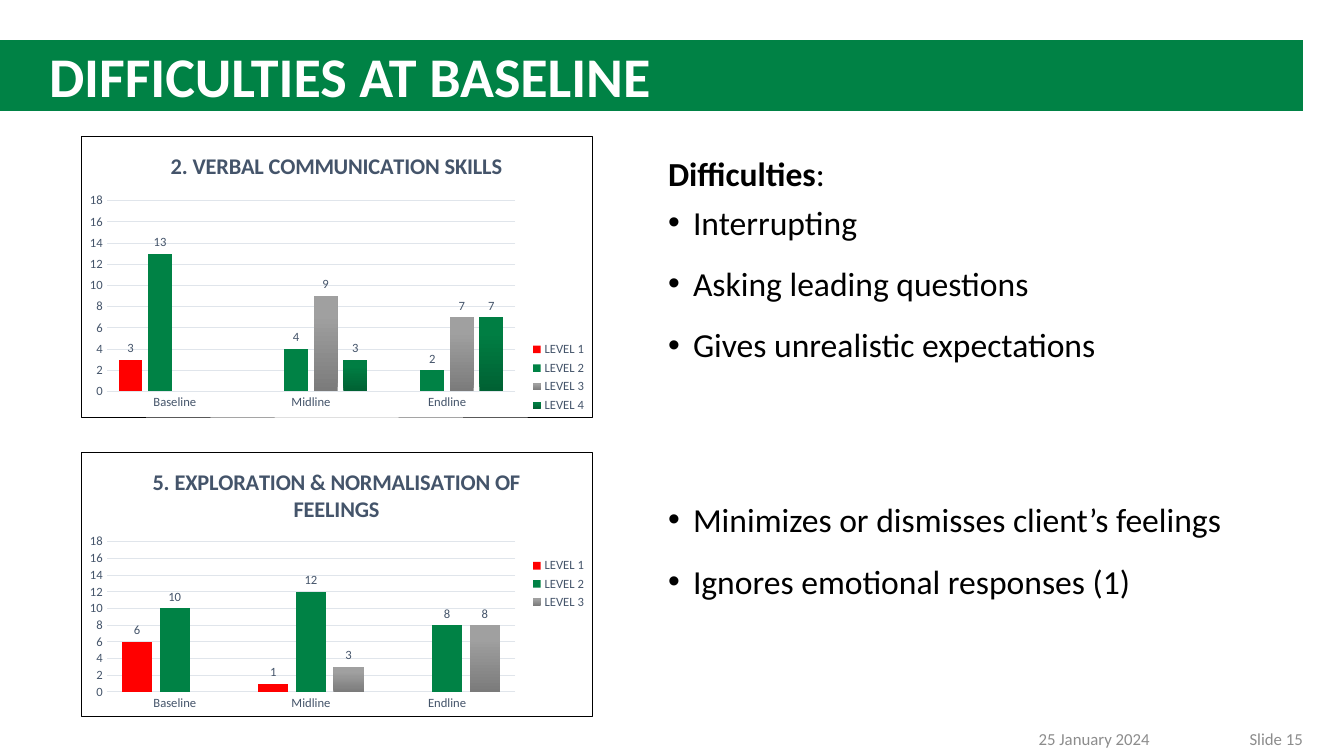
from lxml import etree
from pptx import Presentation
from pptx.chart.data import CategoryChartData
from pptx.dml.color import RGBColor
from pptx.enum.chart import XL_CHART_TYPE, XL_LABEL_POSITION, XL_LEGEND_POSITION, XL_TICK_MARK
from pptx.enum.text import MSO_ANCHOR, MSO_AUTO_SIZE, PP_ALIGN
from pptx.oxml import parse_xml
from pptx.oxml.ns import nsdecls, qn
from pptx.util import Emu, Pt

COLUMNS = XL_CHART_TYPE.COLUMN_CLUSTERED
OUTSIDE = XL_LABEL_POSITION.OUTSIDE_END
LEGEND_RIGHT = XL_LEGEND_POSITION.RIGHT
NO_TICK = XL_TICK_MARK.NONE
TOP, MIDDLE = MSO_ANCHOR.TOP, MSO_ANCHOR.MIDDLE
LEFT, RIGHT = PP_ALIGN.LEFT, PP_ALIGN.RIGHT

SLIDE_W, SLIDE_H = 1344, 756
SCALE = 12192000 / SLIDE_W
FONT = "Calibri"
GREEN, SLATE, GRID, GREY = "008245", "44546A", "E0E5EB", "8C8C8C"
BLACK, WHITE = "000000", "FFFFFF"
LEVEL_FILLS = [("FF0000",), (GREEN,), ("7B7B7B", "A0A0A0"), ("006133", "007E43")]
STAGES = ["Baseline", "Midline", "Endline"]


def px(length):
    return Emu(round(length * SCALE))


def color(hex_value):
    return RGBColor.from_string(hex_value)


def style_font(font, size, hex_value, bold=False):
    font.name = FONT
    font.size = Pt(size)
    font.bold = bold
    font.color.rgb = color(hex_value)


def add_run(paragraph, words, size, hex_value, bold=False):
    run = paragraph.add_run()
    run.text = words
    style_font(run.font, size, hex_value, bold)


def place(shape, box):
    shape.left, shape.top, shape.width, shape.height = map(px, box)


def set_frame(frame, insets, anchor=TOP):
    frame.word_wrap = True
    frame.auto_size = MSO_AUTO_SIZE.NONE
    frame.vertical_anchor = anchor
    (frame.margin_left, frame.margin_top,
     frame.margin_right, frame.margin_bottom) = map(px, insets)


def set_bullet(paragraph, char=None):
    properties = paragraph._p.get_or_add_pPr()
    indent = px(25) if char else 0
    properties.set("marL", str(indent))
    properties.set("indent", str(-indent))
    if char:
        etree.SubElement(properties, qn("a:buFont"), typeface="Arial")
        etree.SubElement(properties, qn("a:buChar"), char=char)
    else:
        etree.SubElement(properties, qn("a:buNone"))


def fill_title(title):
    place(title, (0, 40, 1303, 71))
    title.fill.solid()
    title.fill.fore_color.rgb = color(GREEN)
    set_frame(title.text_frame, (49, 6, 39, 6), MIDDLE)
    heading = title.text_frame.paragraphs[0]
    heading.alignment = LEFT
    add_run(heading, "DIFFICULTIES AT BASELINE", 40, WHITE, True)


def fill_difficulties(body, items):
    place(body, (658, 148, 648, 497))
    frame = body.text_frame
    set_frame(frame, (10, 5, 20, 5))
    lead = frame.paragraphs[0]
    set_bullet(lead)
    lead.space_before = Pt(0)
    add_run(lead, "Difficulties", 24, BLACK, True)
    add_run(lead, ":", 24, BLACK)
    for words, gap in items:
        item = frame.add_paragraph()
        set_bullet(item, "•")
        item.space_before = Pt(gap)
        add_run(item, words, 24, BLACK)


def add_footer(slide, box, words):
    footer = slide.shapes.add_textbox(*map(px, box))
    set_frame(footer.text_frame, (0, 12, 0, 5))
    line = footer.text_frame.paragraphs[0]
    line.alignment = RIGHT
    add_run(line, words, 12, GREY)


def set_layout(parent, index, box, inner=False):
    for old in parent.findall(qn("c:layout")):
        parent.remove(old)
    target = '<c:layoutTarget val="inner"/>' if inner else ""
    modes = "".join(f'<c:{edge}Mode val="edge"/>' for edge in "xy")
    sizes = "".join(f'<c:{key} val="{value}"/>' for key, value in zip("xywh", box))
    parent.insert(index, parse_xml(
        f'<c:layout {nsdecls("c")}><c:manualLayout>{target}{modes}{sizes}'
        "</c:manualLayout></c:layout>"))


def add_border(chart):
    chart._chartSpace.chart.addnext(parse_xml(
        f'<c:spPr {nsdecls("c", "a")}><a:solidFill><a:srgbClr val="{WHITE}"/></a:solidFill>'
        f'<a:ln w="3175"><a:solidFill><a:srgbClr val="{BLACK}"/></a:solidFill></a:ln></c:spPr>'))


def fill_columns(fill, shades):
    if len(shades) == 1:
        fill.solid()
        fill.fore_color.rgb = color(shades[0])
        return
    fill.gradient()
    fill.gradient_angle = 90
    for stop, shade, position in zip(fill.gradient_stops, shades, (0, 0.8)):
        stop.color.rgb = color(shade)
        stop.position = position


def style_line(line, hex_value):
    line.color.rgb = color(hex_value)
    line.width = Pt(0.75)


def style_axes(chart):
    for axis in (chart.category_axis, chart.value_axis):
        axis.major_tick_mark = axis.minor_tick_mark = NO_TICK
        style_font(axis.tick_labels.font, 9, SLATE)
    style_line(chart.category_axis.format.line, GRID)
    scores = chart.value_axis
    scores.minimum_scale, scores.maximum_scale, scores.major_unit = 0, 18, 2
    scores.format.line.fill.background()
    style_line(scores.major_gridlines.format.line, GRID)


def add_level_chart(slide, box, title, levels, plot_box, legend_box):
    data = CategoryChartData()
    data.categories = STAGES
    for number, counts in enumerate(levels, 1):
        data.add_series(f"LEVEL {number}", counts)
    chart = slide.shapes.add_chart(COLUMNS, *map(px, box), data).chart
    style_font(chart.font, 10, BLACK)
    add_border(chart)
    chart.has_title = True
    add_run(chart.chart_title.text_frame.paragraphs[0], title, 16, SLATE, True)
    chart.chart_title.include_in_layout = False
    style_axes(chart)

    plot = chart.plots[0]
    plot.gap_width, plot.overlap = 100, -24
    plot.vary_by_categories = False
    plot.has_data_labels = True
    plot.data_labels.show_value = True
    plot.data_labels.position = OUTSIDE
    style_font(plot.data_labels.font, 9, SLATE)
    for series, shades in zip(plot.series, LEVEL_FILLS):
        fill_columns(series.format.fill, shades)
        series.invert_if_negative = False

    chart.has_legend = True
    chart.legend.position = LEGEND_RIGHT
    chart.legend.include_in_layout = False
    style_font(chart.legend.font, 9, SLATE)
    set_layout(chart._chartSpace.chart.plotArea, 0, plot_box, inner=True)
    set_layout(chart.legend._element, 1, legend_box)


def main():
    deck = Presentation()
    deck.slide_width, deck.slide_height = px(SLIDE_W), px(SLIDE_H)
    slide = deck.slides.add_slide(deck.slide_layouts[1])
    fill_title(slide.shapes.title)
    fill_difficulties(slide.placeholders[1], [
        ("Interrupting", 6),
        ("Asking leading questions", 15),
        ("Gives unrealistic expectations", 15),
        ("Minimizes or dismisses client’s feelings", 96),
        ("Ignores emotional responses (1)", 15),
    ])
    add_footer(slide, (988, 717, 162, 50), "25 January 2024")
    add_footer(slide, (1150, 717, 153, 50), "Slide 15")
    add_level_chart(
        slide, (81, 136, 511, 281), "2. VERBAL COMMUNICATION SKILLS",
        [(3, None, None), (13, 4, 2), (None, 9, 7), (None, 3, 7)],
        (0.05, 0.23, 0.8, 0.68), (0.87, 0.72, 0.13, 0.28))
    add_level_chart(
        slide, (81, 452, 511, 264), "5. EXPLORATION & NORMALISATION OF FEELINGS",
        [(6, 1, None), (10, 12, 8), (None, 3, 8)],
        (0.05, 0.34, 0.8, 0.57), (0.87, 0.39, 0.13, 0.22))
    deck.save("out.pptx")


if __name__ == "__main__":
    main()
